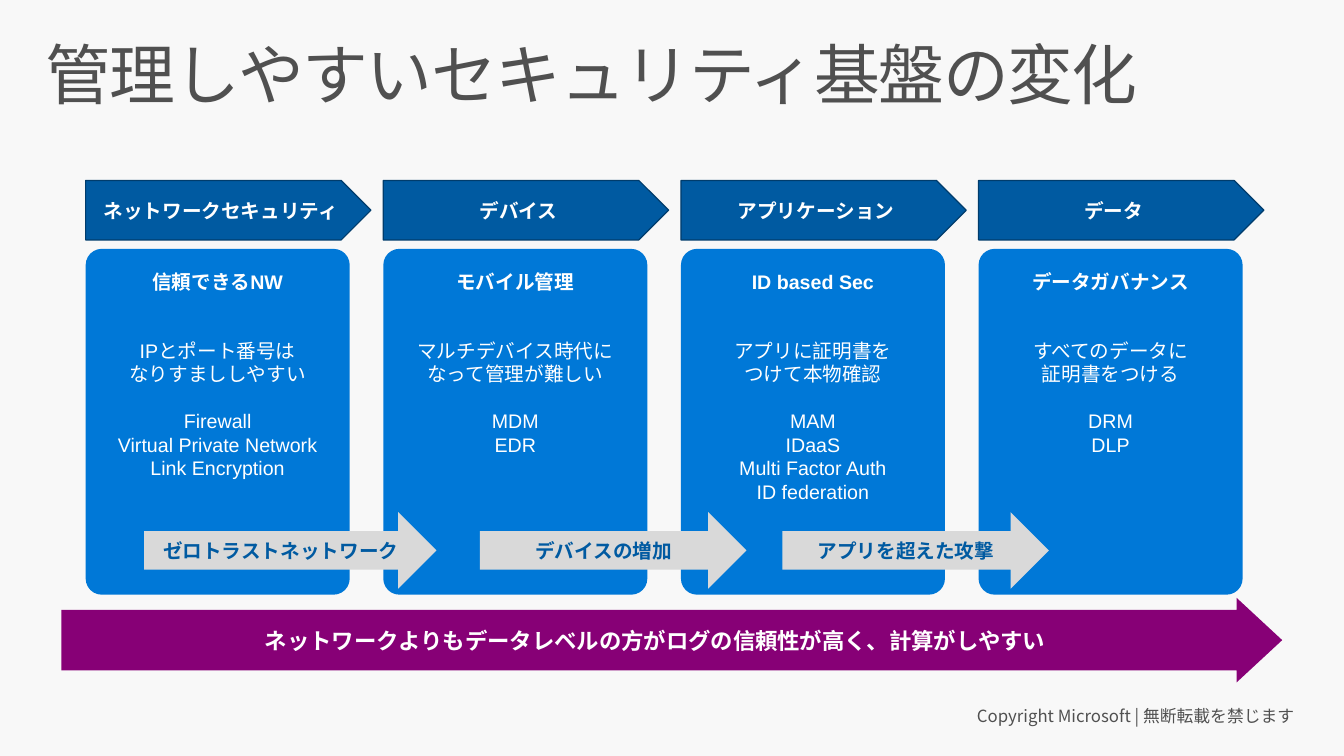
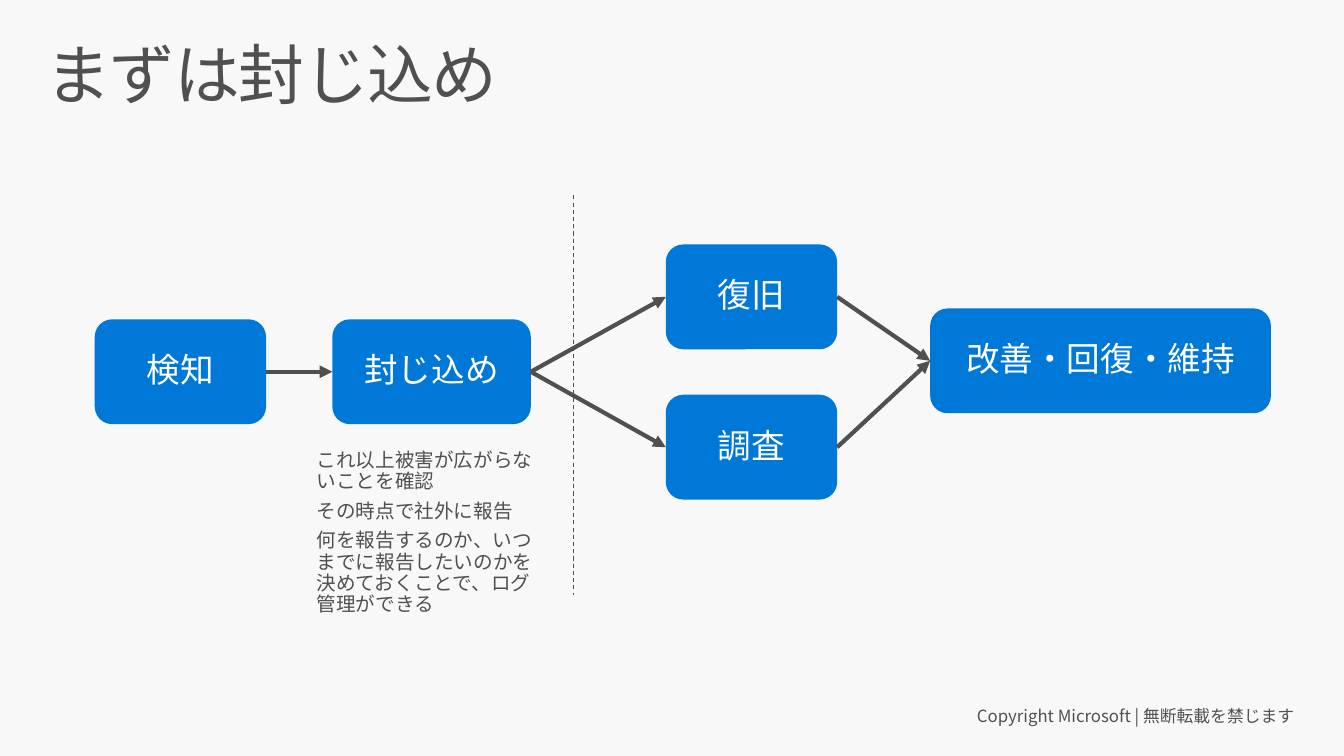
from lxml import etree
from pptx import Presentation
from pptx.dml.color import RGBColor
from pptx.enum.dml import MSO_LINE
from pptx.enum.shapes import MSO_CONNECTOR, MSO_SHAPE
from pptx.enum.text import MSO_ANCHOR, MSO_AUTO_SIZE, PP_ALIGN
from pptx.oxml.ns import qn
from pptx.util import Pt

STRAIGHT = MSO_CONNECTOR.STRAIGHT
DASH = MSO_LINE.DASH
PENTAGON = MSO_SHAPE.PENTAGON
ROUNDED = MSO_SHAPE.ROUNDED_RECTANGLE
ARROW = MSO_SHAPE.RIGHT_ARROW
TOP, MIDDLE = MSO_ANCHOR.TOP, MSO_ANCHOR.MIDDLE
LEFT, CENTER, RIGHT = PP_ALIGN.LEFT, PP_ALIGN.CENTER, PP_ALIGN.RIGHT
GROW = MSO_AUTO_SIZE.SHAPE_TO_FIT_TEXT

BACKGROUND = RGBColor(0xF8, 0xF8, 0xF8)
GRAY = RGBColor(0x50, 0x50, 0x50)
LIGHT_GRAY = RGBColor(0xD9, 0xD9, 0xD9)
WHITE = RGBColor(0xFF, 0xFF, 0xFF)
BLUE = RGBColor(0x00, 0x78, 0xD7)
DARK_BLUE = RGBColor(0x00, 0x5A, 0xA1)
NAVY = RGBColor(0x00, 0x3C, 0x6C)
PURPLE = RGBColor(0x87, 0x00, 0x76)

LATIN_FONT = "Arial"
JAPANESE_FONT = "Noto Sans CJK JP"
NARROW_INSETS = (7.2, 3.6)
WIDE_INSETS = (14.4, 11.52)
RIGHT_SITE, LEFT_SITE = 3, 1

TITLE_FONT = {"name": JAPANESE_FONT, "size": Pt(47)}
FOOTER_FONT = {"name": JAPANESE_FONT, "size": Pt(12)}
NOTE_FONT = {"name": JAPANESE_FONT, "size": Pt(14)}
STEP_FONT = {"name": JAPANESE_FONT, "size": Pt(24)}
HEADING_FONT = {"name": LATIN_FONT, "size": Pt(14), "bold": True}
BODY_FONT = {"name": LATIN_FONT, "size": Pt(14), "bold": False}
SHIFT_FONT = {"name": JAPANESE_FONT, "size": Pt(14), "bold": True}
SUMMARY_FONT = {"name": JAPANESE_FONT, "size": Pt(16), "bold": True}

COLUMN_LEFT, COLUMN_PITCH = 61.2, 212.6
COLUMNS = [
    ("ネットワークセキュリティ", "信頼できるNW",
     ["IPとポート番号は", "なりすまししやすい"],
     ["Firewall", "Virtual Private Network", "Link Encryption"]),
    ("デバイス", "モバイル管理",
     ["マルチデバイス時代になって管理が難しい"],
     ["MDM", "EDR"]),
    ("アプリケーション", "ID based Sec",
     ["アプリに証明書を", "つけて本物確認"],
     ["MAM", "IDaaS", "Multi Factor Auth", "ID federation"]),
    ("データ", "データガバナンス",
     ["すべてのデータに", "証明書をつける"],
     ["DRM", "DLP"]),
]
SHIFTS = [
    ("ゼロトラストネットワーク", 103, 208.8),
    ("デバイスの増加", 342.8, 190.4),
    ("アプリを超えた攻撃", 558.8, 190.4),
]
STEPS = [
    ("検知", 67.7, 228.1, 122.4),
    ("封じ込め", 237.4, 228.1, 141.8),
    ("復旧", 475.6, 174.6, 122.4),
    ("調査", 475.6, 282, 122.4),
    ("改善・回復・維持", 664.4, 220.3, 243.4),
]
FLOWS = [
    ("検知", "封じ込め"),
    ("封じ込め", "復旧"),
    ("封じ込め", "調査"),
    ("復旧", "改善・回復・維持"),
    ("調査", "改善・回復・維持"),
]
NOTES = [
    "これ以上被害が広がらないことを確認",
    "その時点で社外に報告",
    "何を報告するのか、いつまでに報告したいのかを決めておくことで、ログ管理ができる",
]


def set_values(target, values):
    for name, value in values.items():
        setattr(target, name, value)


def set_frame(shape, insets, **values):
    side, edge = map(Pt, insets)
    set_values(shape.text_frame, {
        "margin_left": side, "margin_right": side,
        "margin_top": edge, "margin_bottom": edge,
        "word_wrap": True, **values})


def add_text(shape, index, text, font, color, tracking=None, **layout):
    frame = shape.text_frame
    paragraph = frame.add_paragraph() if index else frame.paragraphs[0]
    set_values(paragraph, layout)
    run = paragraph.add_run()
    run.text = text
    set_values(run.font, font)
    run.font.color.rgb = color
    properties = run.font._element if hasattr(run.font, "_element") else run._r.get_or_add_rPr()
    etree.SubElement(properties, qn("a:ea"), typeface=font["name"])
    if tracking is not None:
        properties.set("spc", str(tracking))


def add_box(slide, kind, bounds, fill, adjustments=(), insets=NARROW_INSETS, anchor=MIDDLE):
    shape = slide.shapes.add_shape(kind, *map(Pt, bounds))
    shape.shadow.inherit = False
    shape.fill.solid()
    shape.fill.fore_color.rgb = fill
    shape.line.fill.background()
    for index, value in enumerate(adjustments):
        shape.adjustments[index] = value
    set_frame(shape, insets, vertical_anchor=anchor)
    return shape


def add_text_box(slide, bounds, insets, **frame_values):
    shape = slide.shapes.add_textbox(*map(Pt, bounds))
    set_frame(shape, insets, vertical_anchor=TOP, **frame_values)
    return shape


def add_line(slide, width, start=(0, 0), end=(0, 0)):
    connector = slide.shapes.add_connector(STRAIGHT, *map(Pt, (*start, *end)))
    connector.line.color.rgb = GRAY
    connector.line.width = Pt(width)
    etree.SubElement(connector._element.spPr, qn("a:effectLst"))
    return connector


def add_flow(slide, source, target):
    connector = add_line(slide, 3)
    connector.begin_connect(source, RIGHT_SITE)
    connector.end_connect(target, LEFT_SITE)
    line = connector.line._get_or_add_ln()
    etree.SubElement(line, qn("a:tailEnd"), type="triangle")


def add_slide(presentation, title):
    slide = presentation.slides.add_slide(presentation.slide_layouts[6])
    slide.background.fill.solid()
    slide.background.fill.fore_color.rgb = BACKGROUND
    footer = add_text_box(slide, (679, 499, 259.9, 36), WIDE_INSETS,
                          word_wrap=False, auto_size=GROW)
    add_text(footer, 0, "Copyright Microsoft | 無断転載を禁じます", FOOTER_FONT, GRAY,
             alignment=RIGHT, line_spacing=0.9, space_after=Pt(6))
    heading = add_text_box(slide, (20.9, 23, 918, 70.6), (11.52, 7.2))
    add_text(heading, 0, title, TITLE_FONT, GRAY, tracking=-100,
             alignment=LEFT, line_spacing=0.9)
    return slide


def add_column(slide, left, category, heading, issue, measures):
    header = add_box(slide, PENTAGON, (left, 128.9, 203.8, 42.5), DARK_BLUE)
    header.line.color.rgb = NAVY
    header.line.width = Pt(0.85)
    add_text(header, 0, category, HEADING_FONT, WHITE, alignment=CENTER)
    card = add_box(slide, ROUNDED, (left, 177.8, 188.6, 247), BLUE, [0.061], WIDE_INSETS, TOP)
    add_text(card, 0, heading, HEADING_FONT, WHITE, alignment=CENTER)
    gaps = {0: Pt(32.5), len(issue): Pt(16.5)}
    for index, text in enumerate(issue + measures):
        add_text(card, index + 1, text, BODY_FONT, WHITE, alignment=CENTER,
                 space_before=gaps.get(index, Pt(0)))


def add_security_slide(presentation):
    slide = add_slide(presentation, "管理しやすいセキュリティ基盤の変化")
    for index, column in enumerate(COLUMNS):
        add_column(slide, COLUMN_LEFT + index * COLUMN_PITCH, *column)
    for text, left, width in SHIFTS:
        shift = add_box(slide, ARROW, (left, 365.8, width, 54.7), LIGHT_GRAY)
        add_text(shift, 0, text, SHIFT_FONT, DARK_BLUE, alignment=CENTER)
    summary = add_box(slide, ARROW, (43.9, 427, 872, 60.5), PURPLE, [0.714, 0.539])
    add_text(summary, 0, "ネットワークよりもデータレベルの方がログの信頼性が高く、計算がしやすい",
             SUMMARY_FONT, WHITE, alignment=CENTER)


def add_containment_slide(presentation):
    slide = add_slide(presentation, "まずは封じ込め")
    steps = {}
    for text, left, top, width in STEPS:
        step = add_box(slide, ROUNDED, (left, top, width, 74.9), BLUE, insets=WIDE_INSETS)
        add_text(step, 0, text, STEP_FONT, WHITE, alignment=CENTER, line_spacing=0.9)
        steps[text] = step
    for source, target in FLOWS:
        add_flow(slide, steps[source], steps[target])
    divider = add_line(slide, 0.75, (409.7, 139.5), (409.7, 424.8))
    divider.line.dash_style = DASH
    notes = add_text_box(slide, (211.7, 310.3, 192.2, 142.6), WIDE_INSETS, auto_size=GROW)
    for index, text in enumerate(NOTES):
        add_text(notes, index, text, NOTE_FONT, GRAY, alignment=LEFT,
                 line_spacing=0.9, space_after=Pt(6))


def main():
    presentation = Presentation()
    set_values(presentation, {"slide_width": Pt(960), "slide_height": Pt(540)})
    add_security_slide(presentation)
    add_containment_slide(presentation)
    presentation.save("out.pptx")


if __name__ == "__main__":
    main()
